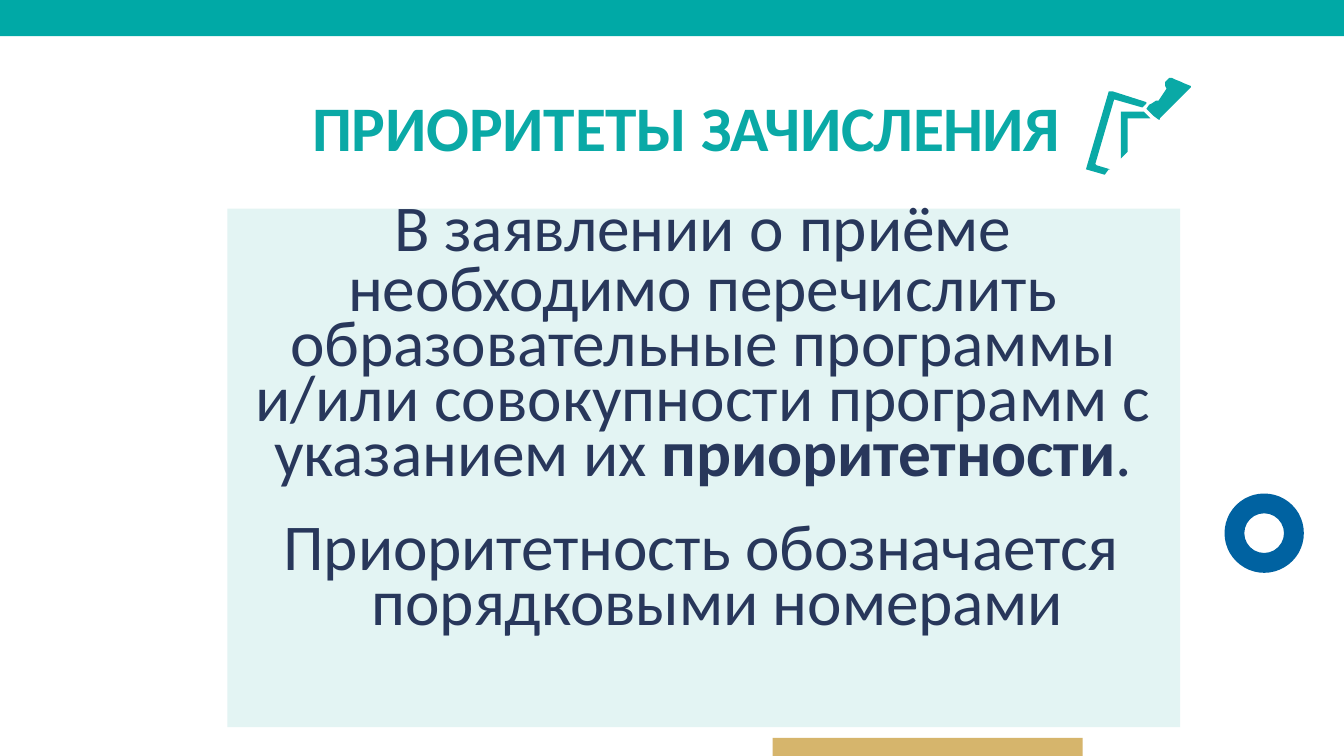
from dataclasses import dataclass

from pptx import Presentation
from pptx.dml.color import RGBColor as Rgb
from pptx.enum.shapes import MSO_SHAPE as Preset
from pptx.enum.text import MSO_AUTO_SIZE as AutoSize, PP_ALIGN as Align
from pptx.shapes.autoshape import Shape
from pptx.slide import Slide
from pptx.util import Pt


@dataclass(frozen=True)
class Theme:
    font: str = "Calibri"
    title_size: float = 34
    body_size: float = 35
    teal: str = "00A9A6"
    title_teal: str = "0AA9A6"
    gold: str = "D6B56C"
    blue: str = "0062A1"
    mint: str = "E3F4F3"
    navy: str = "28375B"


@dataclass(frozen=True)
class Box:
    left: float
    top: float
    width: float
    height: float

    def lengths(self) -> tuple[Pt, Pt, Pt, Pt]:
        return Pt(self.left), Pt(self.top), Pt(self.width), Pt(self.height)


@dataclass(frozen=True)
class Block:
    box: Box
    fill: str
    preset: Preset = Preset.RECTANGLE


@dataclass(frozen=True)
class Phrase:
    text: str
    tracking: float = 0
    bold: bool = False


@dataclass(frozen=True)
class Passage:
    box: Box
    phrases: tuple[Phrase, ...]
    size: float
    color: str
    top_inset: float
    align: Align = Align.LEFT
    line_spacing: float = 1.0
    margin: float = 1
    indent: float = 0


THEME = Theme()

BLOCKS = (
    Block(Box(0, 0, 720, 19.4), THEME.teal),
    Block(Box(414, 395.3, 166, 9.7), THEME.gold),
    Block(Box(656, 264.4, 42.5, 42.5), THEME.blue, Preset.DONUT),
    Block(Box(121.8, 111.8, 510.4, 277.7), THEME.mint),
)

PASSAGES = (
    Passage(
        Box(166.3, 45.4, 407.5, 42.5),
        (Phrase("ПРИОРИТЕТЫ ", -0.1, True), Phrase("ЗАЧИСЛЕНИЯ", -0.3, True)),
        THEME.title_size, THEME.title_teal, top_inset=1.6,
    ),
    Passage(
        Box(210.2, 97.9, 333.4, 43.9),
        (Phrase("В "), Phrase("заявлении ", -0.1), Phrase("о "), Phrase("приёме", -0.1)),
        THEME.body_size, THEME.navy, top_inset=1.8,
    ),
    Passage(
        Box(126.7, 111.6, 499, 150.5),
        (
            Phrase("необходимо ", -0.2),
            Phrase("перечислить "),
            Phrase("образовательные ", -0.1),
            Phrase("программы и/или совокупности программ с "),
            Phrase("указанием ", -0.1),
            Phrase("их "),
            Phrase("приоритетности", -0.1, True),
            Phrase(".", -0.1),
        ),
        THEME.body_size, THEME.navy, top_inset=32, align=Align.CENTER, line_spacing=0.7,
    ),
    Passage(
        Box(151.2, 265, 451.4, 73.4),
        (Phrase("Приоритетность обозначается порядковыми номерами", -0.1),),
        THEME.body_size, THEME.navy, top_inset=17, line_spacing=0.7, margin=48, indent=-47.3,
    ),
)

ICON_UNIT = Pt(0.72)
SHEET = (
    (853, 76), (828, 68), (825, 68), (808, 126), (822, 130), (825, 126),
    (826, 126), (816, 123), (815, 122), (829, 74), (850, 80), (853, 77),
)
CORNER = (
    (856, 88), (851, 83), (834, 83), (834, 118), (839, 113), (839, 88),
)
HAND = (
    (886, 65), (886, 64), (881, 62), (879, 61), (874, 59), (872, 58), (870, 58),
    (869, 59), (867, 61), (867, 64), (868, 66), (862, 75), (860, 75), (857, 77),
    (855, 78), (853, 81), (858, 86), (862, 89), (863, 89), (863, 88),
)


def paint(shape: Shape, fill: str) -> None:
    shape.shadow.inherit = False
    shape.fill.solid()
    shape.fill.fore_color.rgb = Rgb.from_string(fill)
    shape.line.fill.background()


def draw_block(slide: Slide, block: Block) -> None:
    paint(slide.shapes.add_shape(block.preset, *block.box.lengths()), block.fill)


def draw_icon(slide: Slide, outlines: tuple, fill: str) -> None:
    first, *others = outlines
    builder = slide.shapes.build_freeform(*first[0], scale=ICON_UNIT)
    builder.add_line_segments(first[1:], close=True)
    for outline in others:
        builder.move_to(*outline[0])
        builder.add_line_segments(outline[1:], close=True)
    paint(builder.convert_to_shape(), fill)


def write_passage(slide: Slide, passage: Passage) -> None:
    frame = slide.shapes.add_textbox(*passage.box.lengths()).text_frame
    frame.word_wrap = True
    frame.auto_size = AutoSize.NONE
    frame.margin_left = frame.margin_right = frame.margin_bottom = Pt(0)
    frame.margin_top = Pt(passage.top_inset)
    paragraph = frame.paragraphs[0]
    paragraph.alignment = passage.align
    paragraph.line_spacing = passage.line_spacing
    properties = paragraph._p.get_or_add_pPr()
    properties.set("marL", str(Pt(passage.margin)))
    properties.set("indent", str(Pt(passage.indent)))
    for phrase in passage.phrases:
        run = paragraph.add_run()
        run.text = phrase.text
        run.font.name = THEME.font
        run.font.size = Pt(passage.size)
        run.font.bold = phrase.bold
        run.font.color.rgb = Rgb.from_string(passage.color)
        run._r.get_or_add_rPr().set("spc", str(round(phrase.tracking * 100)))


def main() -> None:
    """Build the slide on enrolment priorities and save it."""
    deck = Presentation()
    deck.slide_width, deck.slide_height = Pt(720), Pt(405)
    slide = deck.slides.add_slide(deck.slide_layouts[6])
    for block in BLOCKS:
        draw_block(slide, block)
    for passage in PASSAGES:
        write_passage(slide, passage)
    draw_icon(slide, (SHEET, CORNER, HAND), THEME.title_teal)
    deck.save("out.pptx")


if __name__ == "__main__":
    main()
